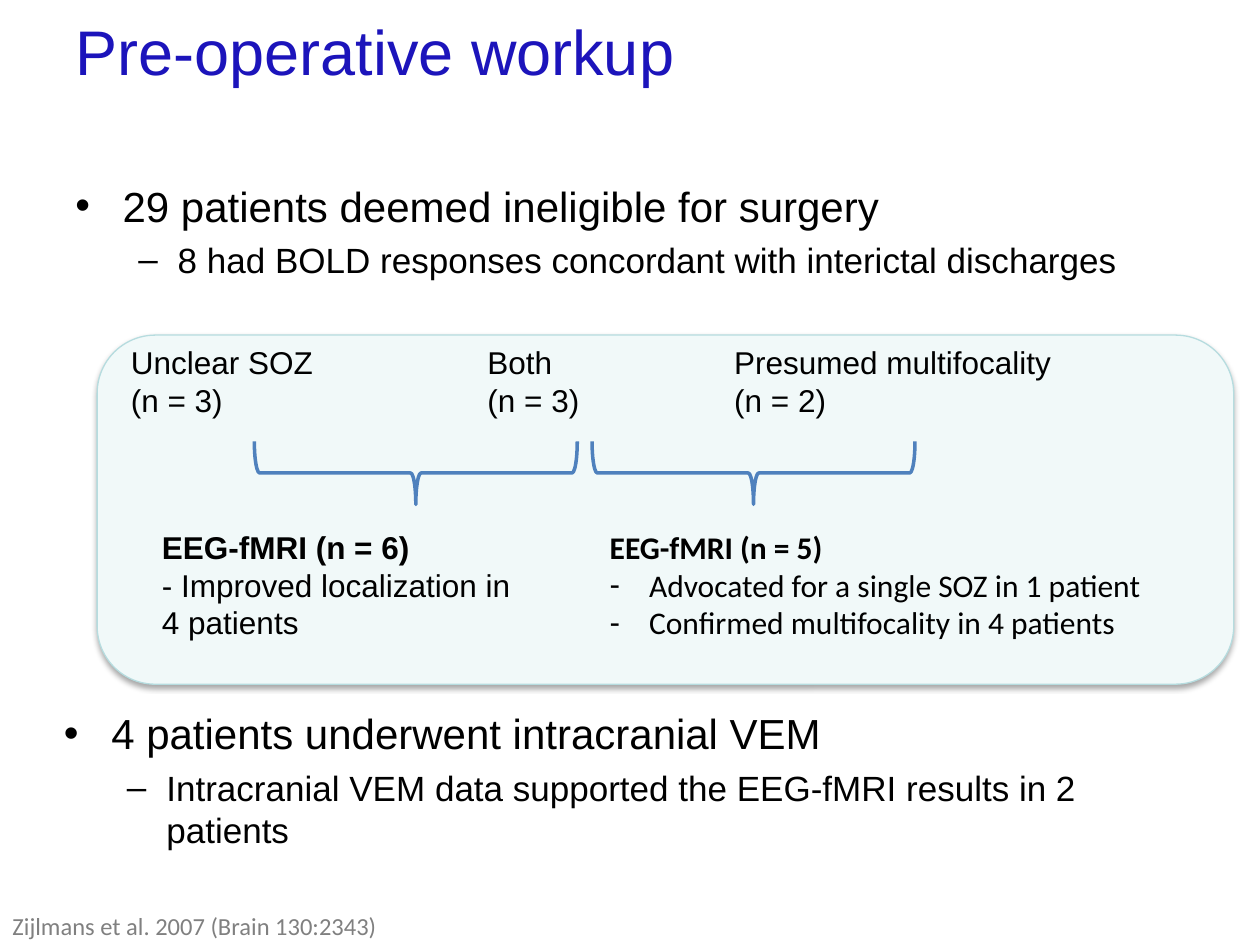
from lxml import etree
from pptx import Presentation
from pptx.dml.color import RGBColor
from pptx.enum.shapes import MSO_SHAPE as SHAPE
from pptx.enum.text import MSO_ANCHOR as ANCHOR, MSO_AUTO_SIZE as FIT, PP_ALIGN as ALIGN
from pptx.oxml import parse_xml
from pptx.oxml.ns import nsdecls, qn
from pptx.util import Pt

COLORS = {
    "title": "1C14BB",
    "text": "000000",
    "source": "808080",
    "panel": "F1F9F9",
    "panel_line": "B6DCDF",
    "brace": "4F81BD",
}


def rgb(name):
    return RGBColor.from_string(COLORS[name])


def write(sp, lines, font="Arial", color="text", fit=FIT.SHAPE_TO_FIT_TEXT):
    tf = sp.text_frame
    tf.word_wrap = True
    tf.auto_size = fit
    tf.vertical_anchor = ANCHOR.TOP
    for i, (text, size, bold, bullet, indent, hang, level) in enumerate(lines):
        p = tf.paragraphs[0] if i == 0 else tf.add_paragraph()
        p.text = text
        p.alignment = ALIGN.LEFT
        p.level = level
        if level:
            p.space_before = Pt(4.8)
        if bullet:
            pPr = p._p.get_or_add_pPr()
            pPr.set("marL", str(Pt(indent)))
            pPr.set("indent", str(-Pt(hang)))
            etree.SubElement(pPr, qn("a:buFont")).set("typeface", "Arial")
            etree.SubElement(pPr, qn("a:buChar")).set("char", bullet)
        for r in p.runs:
            r.font.name = font
            r.font.size = Pt(size)
            r.font.bold = bold
            r.font.color.rgb = rgb(color)


prs = Presentation()
prs.slide_width, prs.slide_height = Pt(720), Pt(540)
s = prs.slides.add_slide(prs.slide_layouts[5])

title = s.shapes.title
title.left, title.top, title.width, title.height = Pt(36), Pt(3.6), Pt(648), Pt(90)
write(title, [("Pre-operative workup", 36, False, None, 0, 0, 0)], color="title", fit=FIT.NONE)

panel = s.shapes.add_shape(SHAPE.ROUNDED_RECTANGLE, Pt(55.5), Pt(191.5), Pt(649.5), Pt(199.5))
panel.fill.solid()
panel.fill.fore_color.rgb = rgb("panel")
panel.line.color.rgb = rgb("panel_line")
panel.line.width = Pt(0.75)
panel._element.spPr.append(parse_xml(
    f'<a:effectLst {nsdecls("a")}><a:outerShdw blurRad="{Pt(3.1)}" dist="{Pt(1.8)}" '
    'dir="5400000" rotWithShape="0"><a:srgbClr val="000000"><a:alpha val="35000"/>'
    '</a:srgbClr></a:outerShdw></a:effectLst>'))

groups = [
    (67.7, 156, "Unclear SOZ", "(n = 3)"),
    (271.5, 125, "Both", "(n = 3)"),
    (412.5, 219, "Presumed multifocality", "(n = 2)"),
]
for left, width, name, count in groups:
    sp = s.shapes.add_textbox(Pt(left), Pt(192.5), Pt(width), Pt(51))
    write(sp, [(text, 18, False, None, 0, 0, 0) for text in (name, count)])

for left in (219.6, 412.6):
    brace = s.shapes.add_shape(SHAPE.LEFT_BRACE, Pt(left), Pt(178), Pt(36), Pt(184.5))
    brace.rotation = 270
    brace.shadow.inherit = False
    brace.fill.background()
    brace.line.color.rgb = rgb("brace")
    brace.line.width = Pt(2)

results = [
    (85.5, 232, 16, "Arial", [
        ("EEG-fMRI (n = 6)", 18, True, None, 0, 0, 0),
        ("- Improved localization in 4 patients", 18, False, None, 0, 0, 0),
    ]),
    (341.3, 381, 7.2, "Calibri", [
        ("EEG-fMRI (n = 5)", 18, True, None, 0, 0, 0),
        ("Advocated for a single SOZ in 1 patient", 18, False, "-", 22.5, 22.5, 0),
        ("Confirmed multifocality in 4 patients", 18, False, "-", 22.5, 22.5, 0),
    ]),
]
for left, width, margin, font, lines in results:
    sp = s.shapes.add_textbox(Pt(left), Pt(298), Pt(width), Pt(72.7))
    sp.text_frame.margin_right = Pt(margin)
    write(sp, lines, font)

findings = [
    (36, 99.4, 95, "29 patients deemed ineligible for surgery",
     "8 had BOLD responses concordant with interictal discharges"),
    (29.5, 401, 92, "4 patients underwent intracranial VEM",
     "Intracranial VEM data supported the EEG-fMRI results in 2 patients"),
]
for left, top, height, main, detail in findings:
    sp = s.shapes.add_textbox(Pt(left), Pt(top), Pt(648), Pt(height))
    write(sp, [(main, 24, False, "•", 27, 27, 0),
               (detail, 20, False, "–", 58.5, 22.5, 1)], fit=FIT.NONE)

source = s.shapes.add_textbox(Pt(0), Pt(517), Pt(291.6), Pt(24.5))
write(source, [("Zijlmans et al. 2007 (Brain 130:2343)", 14, False, None, 0, 0, 0)],
      "Calibri", "source")

prs.save("out.pptx")
